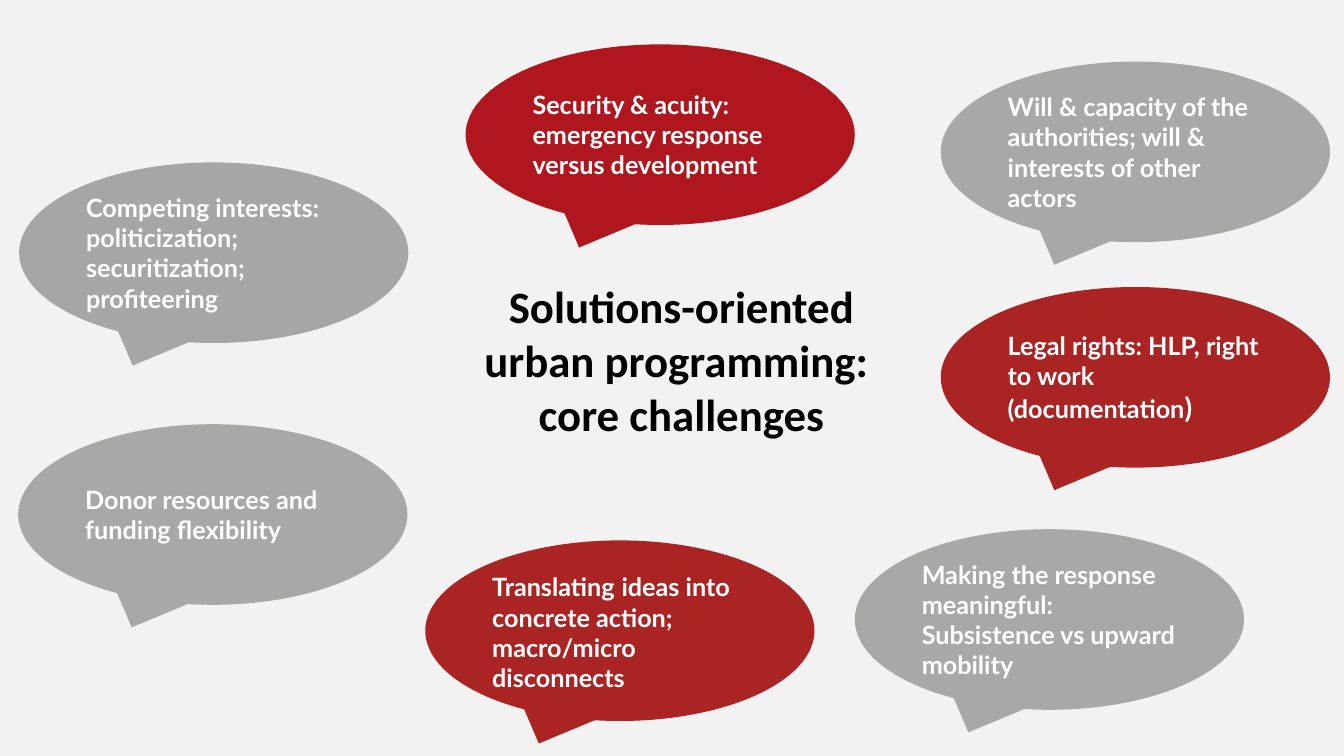
from dataclasses import dataclass

from pptx import Presentation
from pptx import util as u
from pptx.dml import color
from pptx.enum import shapes, text


@dataclass(frozen=True)
class Theme:
    backdrop: str = "F2F2F2"
    grey: str = "A8A8A7"
    mid_grey: str = "A6A6A6"
    red: str = "AA2424"
    bright_red: str = "AF161E"
    white: str = "FFFFFF"
    black: str = "000000"
    body_font: str = "Lato"
    title_font: str = "Calibri"
    body: int = 18
    large: int = 20
    title: int = 32


T = Theme()
BUBBLE_SIZE = (278, 129)

BUBBLES = [
    (672, 44, T.grey, [("Will & capacity of the authorities; will & interests of other actors", T.body)]),
    (13, 303, T.grey, [("Donor resources and funding flexibility", T.body)]),
    (672, 205, T.red, [("Legal rights: HLP, right to work (documentation", T.body), (")", T.large)]),
    (13.7, 116, T.mid_grey, [("Competing interests: politicization; securitization; profiteering", T.body)]),
    (332.6, 31.7, T.bright_red, [("Security & acuity: emergency response versus development", T.body)]),
    (610.6, 378, T.grey, [("Making the response meaningful: Subsistence vs upward mobility", T.body)]),
    (303.8, 386, T.red, [("Translating", T.body), (" ", T.large),
                         ("ideas into concrete action; macro/micro disconnects", T.body)]),
]


def set_all(obj, values):
    for name, value in values.items():
        setattr(obj, name, value)


def paint(fill, rgb):
    fill.solid()
    fill.fore_color.rgb = color.RGBColor.from_string(rgb)


def write(sp, runs, font, rgb, align, anchor):
    tf = sp.text_frame
    set_all(tf, {"word_wrap": True, "vertical_anchor": anchor})
    p = tf.paragraphs[0]
    p.alignment = align
    for words, size in runs:
        r = p.add_run()
        r.text = words
        set_all(r.font, {"name": font, "size": u.Pt(size), "bold": True})
        r.font.color.rgb = color.RGBColor.from_string(rgb)


def add_bubble(s, left, top, rgb, runs):
    box = [u.Pt(v) for v in (left, top, *BUBBLE_SIZE)]
    sp = s.shapes.add_shape(shapes.MSO_SHAPE.OVAL_CALLOUT, *box)
    sp.shadow.inherit = False
    paint(sp.fill, rgb)
    sp.line.fill.background()
    write(sp, runs, T.body_font, T.white, text.PP_ALIGN.LEFT, text.MSO_ANCHOR.MIDDLE)


def add_title(s, box, words):
    sp = s.shapes.add_textbox(*[u.Pt(v) for v in box])
    p = sp.text_frame.paragraphs[0]
    first, *rest = words
    write(sp, [(first, T.title)], T.title_font, T.black,
          text.PP_ALIGN.CENTER, text.MSO_ANCHOR.TOP)
    for line in rest:
        p.add_line_break()
        write(sp, [(line, T.title)], T.title_font, T.black,
              text.PP_ALIGN.CENTER, text.MSO_ANCHOR.TOP)


def main():
    prs = Presentation()
    set_all(prs, {"slide_width": u.Pt(960), "slide_height": u.Pt(540)})
    s = prs.slides.add_slide(prs.slide_layouts[6])
    paint(s.background.fill, T.backdrop)
    for bubble in BUBBLES:
        add_bubble(s, *bubble)
    add_title(s, (329.8, 195.8, 314, 123.8),
              ["Solutions-oriented urban programming: ", "core challenges"])
    prs.save("out.pptx")


if __name__ == "__main__":
    main()
